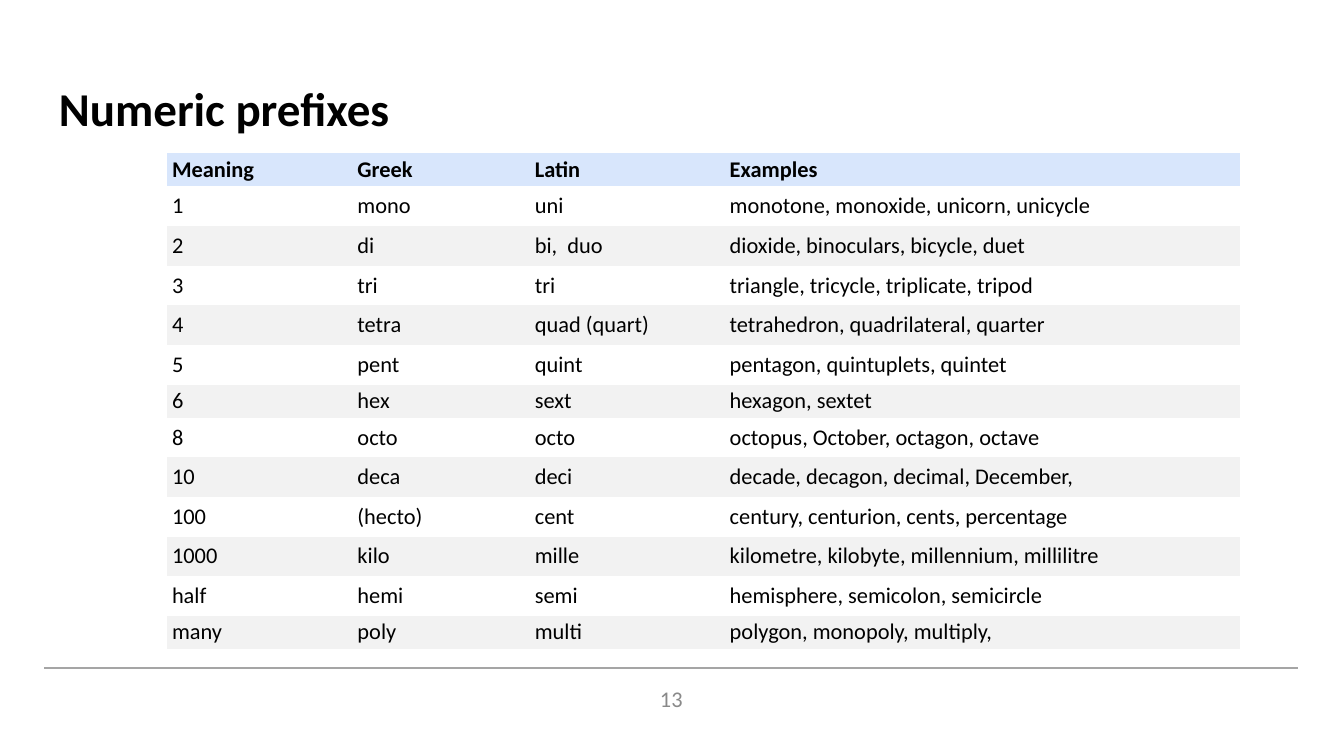
from lxml.etree import SubElement
from pptx import Presentation
from pptx.dml.color import RGBColor
from pptx.enum.shapes import MSO_CONNECTOR
from pptx.enum.text import MSO_ANCHOR as Anchor, PP_ALIGN as Align
from pptx.oxml.ns import qn
from pptx.util import Inches, Pt

COLORS = {
    "text": "000000",
    "page_number": "898989",
    "rule": "A5A5A5",
    "header": "D8E6FC",
    "band": "F2F2F2",
}

COLUMN_WIDTHS = [1.38, 1.32, 1.45, 3.84]
SHORT_ROW = Inches(0.74) // 3  # three short rows share this height
TALL_ROW = Inches(2.95) // 10  # ten tall rows share this height
SHORT_ROW_LABELS = {"Meaning", "6", "many"}

PREFIXES = [
    ("Meaning", "Greek", "Latin", "Examples"),
    ("1", "mono", "uni", "monotone, monoxide, unicorn, unicycle"),
    ("2", "di", "bi,  duo", "dioxide, binoculars, bicycle, duet"),
    ("3", "tri", "tri", "triangle, tricycle, triplicate, tripod"),
    ("4", "tetra", "quad (quart)", "tetrahedron, quadrilateral, quarter"),
    ("5", "pent", "quint", "pentagon, quintuplets, quintet"),
    ("6", "hex", "sext", "hexagon, sextet"),
    ("8", "octo", "octo", "octopus, October, octagon, octave"),
    ("10", "deca", "deci", "decade, decagon, decimal, December,"),
    ("100", "(hecto)", "cent", "century, centurion, cents, percentage"),
    ("1000", "kilo", "mille", "kilometre, kilobyte, millennium, millilitre"),
    ("half", "hemi", "semi", "hemisphere, semicolon, semicircle"),
    ("many", "poly", "multi", "polygon, monopoly, multiply,"),
]


class SlideBuilder:
    """Holds the text style and the slide being filled."""

    font_name = "Calibri"
    body_size = 12

    def __init__(self, slide):
        self.slide = slide

    def color(self, name):
        return RGBColor.from_string(COLORS[name])

    def add_run(self, paragraph, text, size=body_size, color="text", bold=False):
        run = paragraph.add_run()
        run.text = text
        run.font.name = self.font_name
        run.font.size = Pt(size)
        run.font.bold = bold
        run.font.color.rgb = self.color(color)

    def set_margins(self, target, side, vertical):
        target.margin_left = target.margin_right = Inches(side)
        target.margin_top = target.margin_bottom = Inches(vertical)

    def add_text(self, text, box, margins, anchor=Anchor.TOP, align=Align.LEFT, **style):
        frame = self.slide.shapes.add_textbox(*map(Inches, box)).text_frame
        frame.word_wrap = True
        frame.vertical_anchor = anchor
        self.set_margins(frame, *margins)
        paragraph = frame.paragraphs[0]
        paragraph.alignment = align
        self.add_run(paragraph, text, **style)

    def add_rule(self, left, right, y):
        rule = self.slide.shapes.add_connector(
            MSO_CONNECTOR.STRAIGHT, Inches(left), Inches(y), Inches(right), Inches(y))
        rule.line.color.rgb = self.color("rule")
        rule.line.width = Pt(0.75)
        SubElement(rule._element.spPr, qn("a:effectLst"))

    def clear_borders(self, cell):
        properties = cell._tc.get_or_add_tcPr()
        for side in ("a:lnL", "a:lnR", "a:lnT", "a:lnB"):
            SubElement(SubElement(properties, qn(side)), qn("a:noFill"))

    def fill_cell(self, cell, row_index):
        """Tint the header and every second row below it."""
        if row_index % 2:
            cell.fill.background()
        else:
            cell.fill.solid()
            cell.fill.fore_color.rgb = self.color("band" if row_index else "header")

    def add_table(self, rows, left, top):
        heights = [SHORT_ROW if row[0] in SHORT_ROW_LABELS else TALL_ROW for row in rows]
        table = self.slide.shapes.add_table(
            len(rows), len(COLUMN_WIDTHS), Inches(left), Inches(top),
            Inches(sum(COLUMN_WIDTHS)), sum(heights)).table
        table.horz_banding = False
        for column, width in zip(table.columns, COLUMN_WIDTHS):
            column.width = Inches(width)
        for row_index, (row, height) in enumerate(zip(rows, heights)):
            table.rows[row_index].height = height
            for column_index, text in enumerate(row):
                cell = table.cell(row_index, column_index)
                cell.vertical_anchor = Anchor.MIDDLE
                self.set_margins(cell, 0.04, 0.02)
                self.clear_borders(cell)
                self.fill_cell(cell, row_index)
                self.add_run(cell.text_frame.paragraphs[0], text, bold=row_index == 0)


def main():
    deck = Presentation()
    deck.slide_width = Inches(10)
    deck.slide_height = deck.slide_width * 9 // 16
    builder = SlideBuilder(deck.slides.add_slide(deck.slide_layouts[6]))
    builder.add_text("13", (3.83, 5, 2.33, 0.4), (0.1, 0.05), Anchor.MIDDLE,
                     Align.CENTER, color="page_number")
    builder.add_rule(0.33, 9.66, 4.97)
    builder.add_text("Numeric prefixes", (0.34, 0.49, 9.32, 0.63), (0.1, 0.1),
                     size=25.2, bold=True)
    builder.add_table(PREFIXES, 1.24, 1.14)
    deck.save("out.pptx")


if __name__ == "__main__":
    main()
